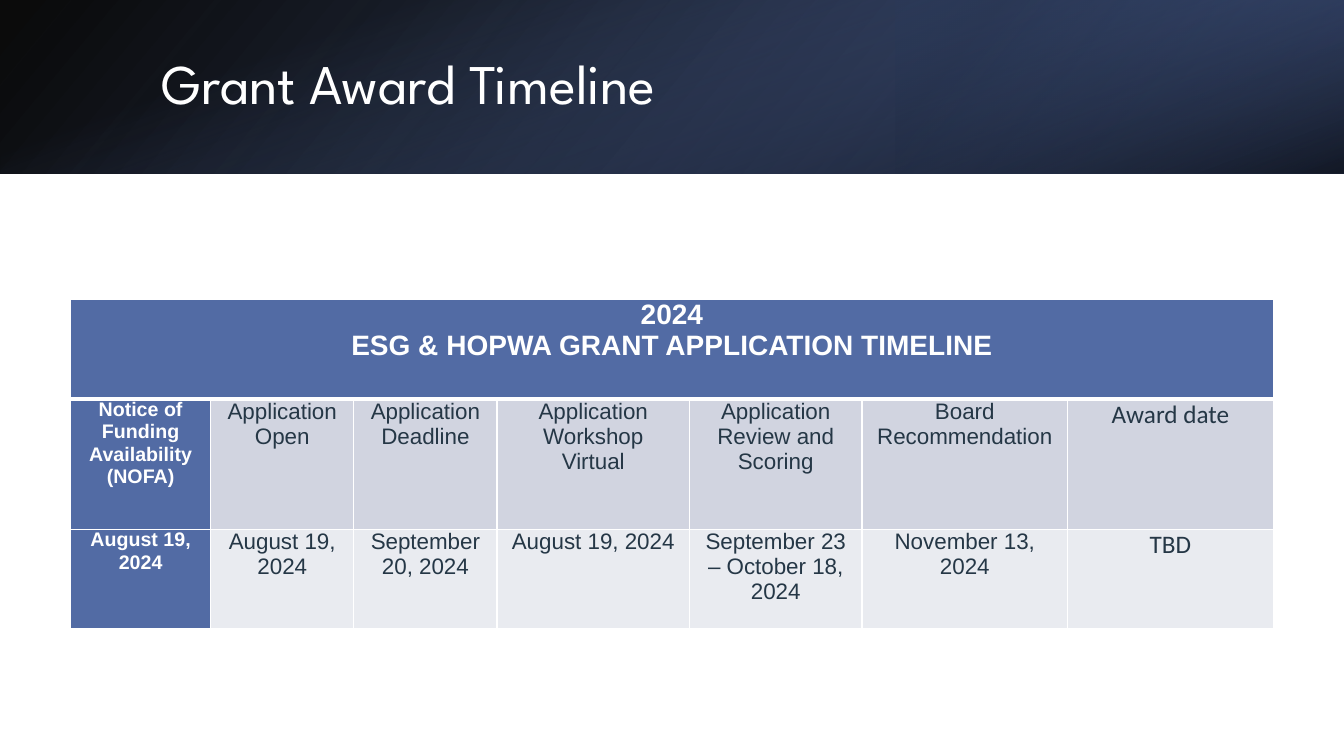
import dataclasses

import lxml.etree
import pptx
import pptx.dml.color
import pptx.enum.shapes
import pptx.enum.text
import pptx.oxml.ns
import pptx.util

Inches = pptx.util.Inches
qn = pptx.oxml.ns.qn


@dataclasses.dataclass(frozen=True)
class Theme:
    """Colours, fonts and type sizes of the slide."""
    white: str = "FFFFFF"
    black: str = "000000"
    navy: str = "293652"
    slate: str = "3E507B"
    blue: str = "526BA4"
    ink: str = "253746"
    label_band: str = "D1D4E0"
    date_band: str = "E9EBF0"
    title_font: str = "League Spartan"
    body_font: str = "Arial"
    award_font: str = "Calibri"
    title_size: int = 40
    heading_size: int = 20
    award_size: int = 18
    body_size: int = 16
    notice_size: int = 14


THEME = Theme()
HEADING = "2024\vESG & HOPWA GRANT APPLICATION TIMELINE"
STEPS = [
    ("Notice of Funding Availability (NOFA)", "August 19, 2024", 1.39),
    ("Application Open", "August 19, 2024", 1.42),
    ("Application Deadline", "September 20, 2024", 1.42),
    ("Application Workshop\nVirtual", "August 19, 2024", 1.91),
    ("Application Review and Scoring", "September 23 – October 18, 2024", 1.71),
    ("Board Recommendation", "November 13, 2024", 2.04),
    ("Award date", "TBD", 2.04),
]


def rgb(value):
    """Turn a hex string into a colour."""
    return pptx.dml.color.RGBColor.from_string(value)


def style_text(frame, font, size, color, bold=False):
    """Format every run of a text frame."""
    for para in frame.paragraphs:
        for span in para.runs:
            span.font.name = font
            span.font.size = pptx.util.Pt(size)
            span.font.bold = bold
            span.font.color.rgb = rgb(color)


def add_gradient(page, box, stops, angle, rotation=0, flip=False):
    """Add a rectangle with a translucent gradient, its angle clockwise."""
    shape = page.shapes.add_shape(
        pptx.enum.shapes.MSO_SHAPE.RECTANGLE, *map(Inches, box))
    shape.shadow.inherit = False
    shape.line.fill.background()
    shape.rotation = rotation
    if flip:
        shape.element.spPr.get_or_add_xfrm().set("flipH", "1")
    shape.fill.gradient()
    shape.fill.gradient_angle = 360 - angle
    for stop, (position, color, _) in zip(shape.fill.gradient_stops, stops):
        stop.position = position / 100
        stop.color.rgb = rgb(color)
    colors = shape.element.spPr.iter(qn("a:srgbClr"))
    for node, (_, _, opacity) in zip(list(colors), stops):
        alpha = lxml.etree.SubElement(node, qn("a:alpha"))
        alpha.set("val", str(opacity * 1000))


def add_banner(page, left, top, width, height):
    """Draw the layered gradient banner and its title."""
    add_gradient(page, (left, top, width, height),
                 [(0, THEME.black, 96), (100, THEME.slate, 100)], 140, flip=True)
    third = width / 3
    add_gradient(page, (left + width - third, top, third, height),
                 [(19, THEME.navy, 68), (100, THEME.blue, 79)], 320, 180, True)
    shift = (width - height) / 2
    add_gradient(page, (left + shift, top - shift, height, width),
                 [(23, THEME.blue, 0), (99, THEME.black, 74)], 340, 90)

    title = page.shapes.add_textbox(
        Inches(left + 1.5), Inches(top + 0.38), Inches(10.98), Inches(0.96))
    frame = title.text_frame
    frame.word_wrap = True
    frame.vertical_anchor = pptx.enum.text.MSO_ANCHOR.MIDDLE
    frame.text = "Grant Award Timeline"
    frame.paragraphs[0].line_spacing = 0.9
    style_text(frame, THEME.title_font, THEME.title_size, THEME.white)


def set_borders(cell, top=1, bottom=1):
    """Give a cell white borders, widths in points."""
    properties = cell._tc.get_or_add_tcPr()
    for side, width in (("L", 1), ("R", 1), ("T", top), ("B", bottom)):
        line = lxml.etree.SubElement(properties, qn(f"a:ln{side}"))
        line.set("w", str(pptx.util.Pt(width)))
        fill = lxml.etree.SubElement(line, qn("a:solidFill"))
        lxml.etree.SubElement(fill, qn("a:srgbClr")).set("val", THEME.white)


def fill_cell(cell, text, fill, font, size, color, bold):
    """Write centred text into a filled cell."""
    cell.fill.solid()
    cell.fill.fore_color.rgb = rgb(fill)
    cell.margin_left = cell.margin_right = Inches(0.14)
    cell.margin_top = cell.margin_bottom = 0
    cell.text_frame.text = text
    for para in cell.text_frame.paragraphs:
        para.alignment = pptx.enum.text.PP_ALIGN.CENTER
    style_text(cell.text_frame, font, size, color, bold)


def add_timeline(page, left, top, width, height):
    """Draw the table of application steps and dates."""
    table = page.shapes.add_table(
        3, len(STEPS), *map(Inches, (left, top, width, height))).table
    table.first_row = table.horz_banding = False
    for row, row_height in zip(table.rows, (0.99, 1.29, 0.99)):
        row.height = Inches(row_height)
    for column, step in zip(table.columns, STEPS):
        column.width = Inches(step[2])
    for index in range(len(STEPS)):
        set_borders(table.cell(0, index), bottom=3)
        set_borders(table.cell(1, index), top=3)
        set_borders(table.cell(2, index))

    table.cell(0, 0).merge(table.cell(0, len(STEPS) - 1))
    fill_cell(table.cell(0, 0), HEADING, THEME.blue, THEME.body_font,
              THEME.heading_size, THEME.white, True)
    for index, (label, date, _) in enumerate(STEPS):
        rows = ((label, THEME.label_band), (date, THEME.date_band))
        for number, (text, band) in enumerate(rows, 1):
            if index == 0:
                look = (THEME.blue, THEME.body_font, THEME.notice_size,
                        THEME.white, True)
            elif index == len(STEPS) - 1:
                look = (band, THEME.award_font, THEME.award_size,
                        THEME.ink, False)
            else:
                look = (band, THEME.body_font, THEME.body_size,
                        THEME.ink, False)
            fill_cell(table.cell(number, index), text, *look)


def main():
    """Build the deck and save it."""
    deck = pptx.Presentation()
    deck.slide_width, deck.slide_height = Inches(13.33), Inches(7.5)
    page = deck.slides.add_slide(deck.slide_layouts[6])
    page.background.fill.solid()
    page.background.fill.fore_color.rgb = rgb(THEME.white)
    add_banner(page, 0, 0, 13.33, 1.72)
    add_timeline(page, 0.7, 2.97, 11.95, 3.28)
    deck.save("out.pptx")


if __name__ == "__main__":
    main()
